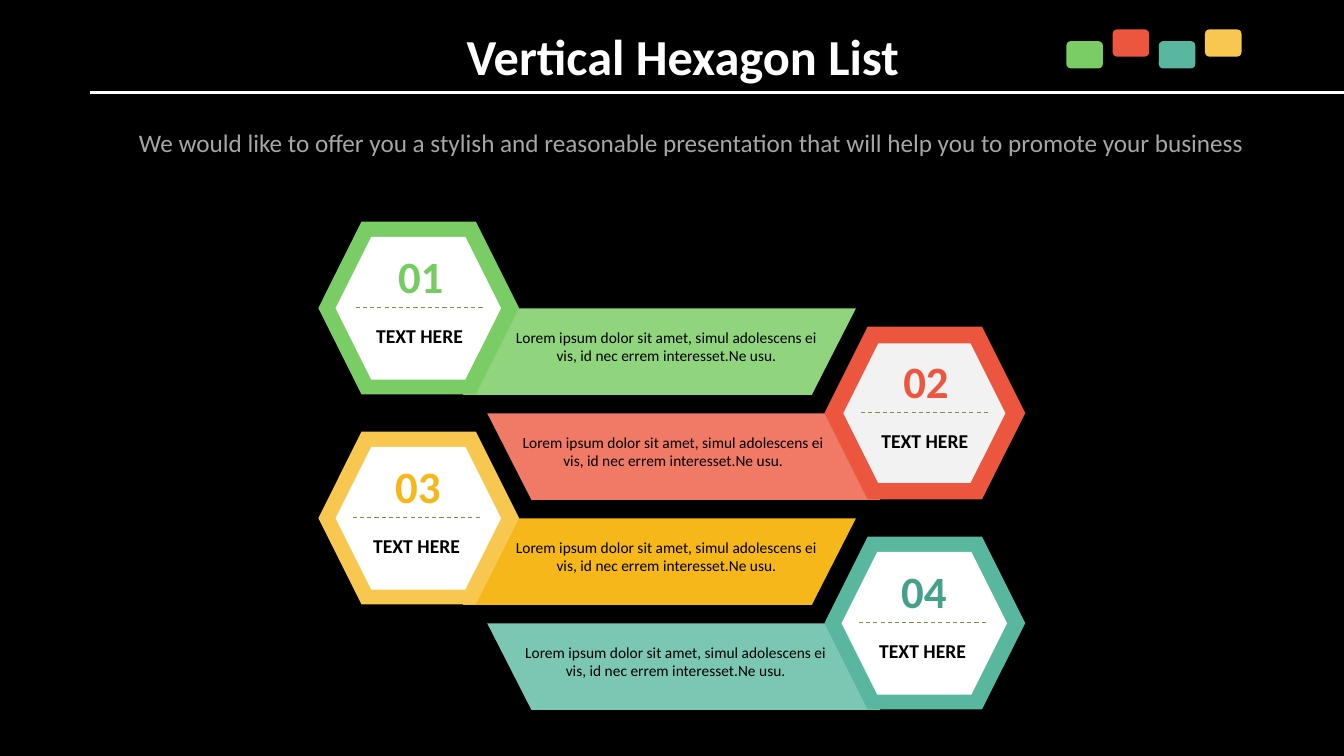
import pptx
import pptx.util
import pptx.dml.color
import pptx.enum.dml
import pptx.enum.shapes
import pptx.enum.text
import pptx.oxml.ns
import lxml.etree

Pt = pptx.util.Pt
RGB = pptx.dml.color.RGBColor
KIND = pptx.enum.shapes.MSO_SHAPE
MID = pptx.enum.text.MSO_ANCHOR.MIDDLE
TOP = pptx.enum.text.MSO_ANCHOR.TOP

WIDE, HIGH = pptx.util.Inches(13.333), pptx.util.Inches(7.5)
COLS, ROWS = 160, 90

BLACK = RGB(0x00, 0x00, 0x00)
WHITE = RGB(0xFF, 0xFF, 0xFF)
PALE = RGB(0xF2, 0xF2, 0xF2)
GRAY = RGB(0xA6, 0xA6, 0xA6)
OLIVE = RGB(0x77, 0x93, 0x3C)
GREEN = RGB(0x7A, 0xCD, 0x64)
RED = RGB(0xEC, 0x56, 0x3F)
TEAL = RGB(0x59, 0xB7, 0x9F)
GOLD = RGB(0xF8, 0xC7, 0x4F)
LIME = RGB(0x90, 0xD5, 0x7D)
LEAF = RGB(0x77, 0xCC, 0x60)
CORAL = RGB(0xF0, 0x7A, 0x66)
AMBER = RGB(0xF6, 0xB7, 0x1A)
MINT = RGB(0x7B, 0xC7, 0xB3)
PINE = RGB(0x45, 0xA1, 0x89)

BLURB = ("Lorem ipsum dolor sit amet, simul adolescens ei vis, "
         "id nec errem interesset.Ne usu.")
PITCH = 12.5
ITEMS = [
    ("01", GREEN, WHITE, LIME, LEAF, 4.2, 59.9),
    ("02", RED, PALE, CORAL, RED, 4.1, 60.7),
    ("03", GOLD, WHITE, AMBER, AMBER, 3.85, 59.9),
    ("04", TEAL, WHITE, MINT, PINE, 3.85, 61),
]


def grid(x, y):
    """Turn a grid column and row into slide lengths."""
    return round(WIDE * x / COLS), round(HIGH * y / ROWS)


def block(slide, kind, x, y, w, h, fill):
    """Draw a flat preset shape."""
    shape = slide.shapes.add_shape(kind, *grid(x, y), *grid(w, h))
    shape.shadow.inherit = False
    shape.fill.solid()
    shape.fill.fore_color.rgb = fill
    shape.line.fill.background()
    return shape


def rule(slide, x, y, w, color, size):
    """Draw a level line."""
    line = slide.shapes.add_connector(
        pptx.enum.shapes.MSO_CONNECTOR.STRAIGHT, *grid(x, y), *grid(x + w, y))
    line.line.color.rgb = color
    line.line.width = Pt(size)
    props = line._element.spPr
    lxml.etree.SubElement(props, pptx.oxml.ns.qn("a:effectLst"))
    return line


def write(shape, text, size, color, bold=False, anchor=TOP):
    """Fill a shape with one centred paragraph."""
    frame = shape.text_frame
    frame.word_wrap = True
    frame.vertical_anchor = anchor
    frame.text = text
    para = frame.paragraphs[0]
    para.alignment = pptx.enum.text.PP_ALIGN.CENTER
    font = para.runs[0].font
    font.name, font.size, font.bold = "Calibri", Pt(size), bold
    font.color.rgb = color
    return para


def label(slide, x, y, w, h, *look, **more):
    """Add a text box."""
    box = slide.shapes.add_textbox(*grid(x, y), *grid(w, h))
    return write(box, *look, **more)


def header(slide):
    """Set the title, its line, the chips and the lead text."""
    rule(slide, 10.7, 11.05, COLS - 10.7, WHITE, 2.25)
    for i, color in enumerate((GREEN, RED, TEAL, GOLD)):
        block(slide, KIND.ROUNDED_RECTANGLE, 126.95 + 5.5 * i,
              3.5 if i % 2 else 4.9, 4.35, 3.25, color)
    title = slide.shapes.title
    title.left, title.top = grid(9.5, 1.55)
    title.width, title.height = grid(143.6, 10.2)
    write(title, "Vertical Hexagon List", 36, WHITE, True, MID)
    lead = label(slide, 13.8, 16, 137, 3.5,
                 "We would like to offer you a stylish and reasonable "
                 "presentation that will help you to promote your business",
                 18, GRAY, anchor=MID)
    lead.line_spacing = Pt(12)


def entry(slide, i, num, rim, core, band, ink, shift, left):
    """Draw one hexagon with its band and texts."""
    right = i % 2
    x, y = (98.15 if right else 37.9), 26.4 + PITCH * i
    strip = block(slide, KIND.TRAPEZOID, 58 if right else 49.9,
                  y + 10.3, 52, 10.3, band)
    strip.adjustments[0] = 0.51
    strip.rotation = 180
    block(slide, KIND.HEXAGON, x, y, 23.9, 20.55, rim)
    inner = block(slide, KIND.HEXAGON, x + 2.05, y + 1.8, 19.7, 17, core)
    if core == PALE:
        inner.line.color.rgb = rim
        inner.line.width = Pt(2)
    x += shift
    label(slide, x, y + 11.6, 15.7, 4.1, "TEXT HERE", 14, BLACK, True)
    label(slide, x + 3.7, y + 2.6, 8.6, 7.7, num, 32, ink, True)
    dash = rule(slide, x + 0.25, y + 10.25, 15.25, OLIVE, 0.75)
    dash.line.dash_style = pptx.enum.dml.MSO_LINE.DASH
    label(slide, left, y + 12.05, 38.9, 6, BLURB, 11, BLACK)


def main():
    """Build and save the slide."""
    deck = pptx.Presentation()
    deck.slide_width, deck.slide_height = WIDE, HIGH
    slide = deck.slides.add_slide(deck.slide_layouts[5])
    slide.background.fill.solid()
    slide.background.fill.fore_color.rgb = BLACK
    header(slide)
    for i, item in enumerate(ITEMS):
        entry(slide, i, *item)
    deck.save("out.pptx")


if __name__ == "__main__":
    main()
